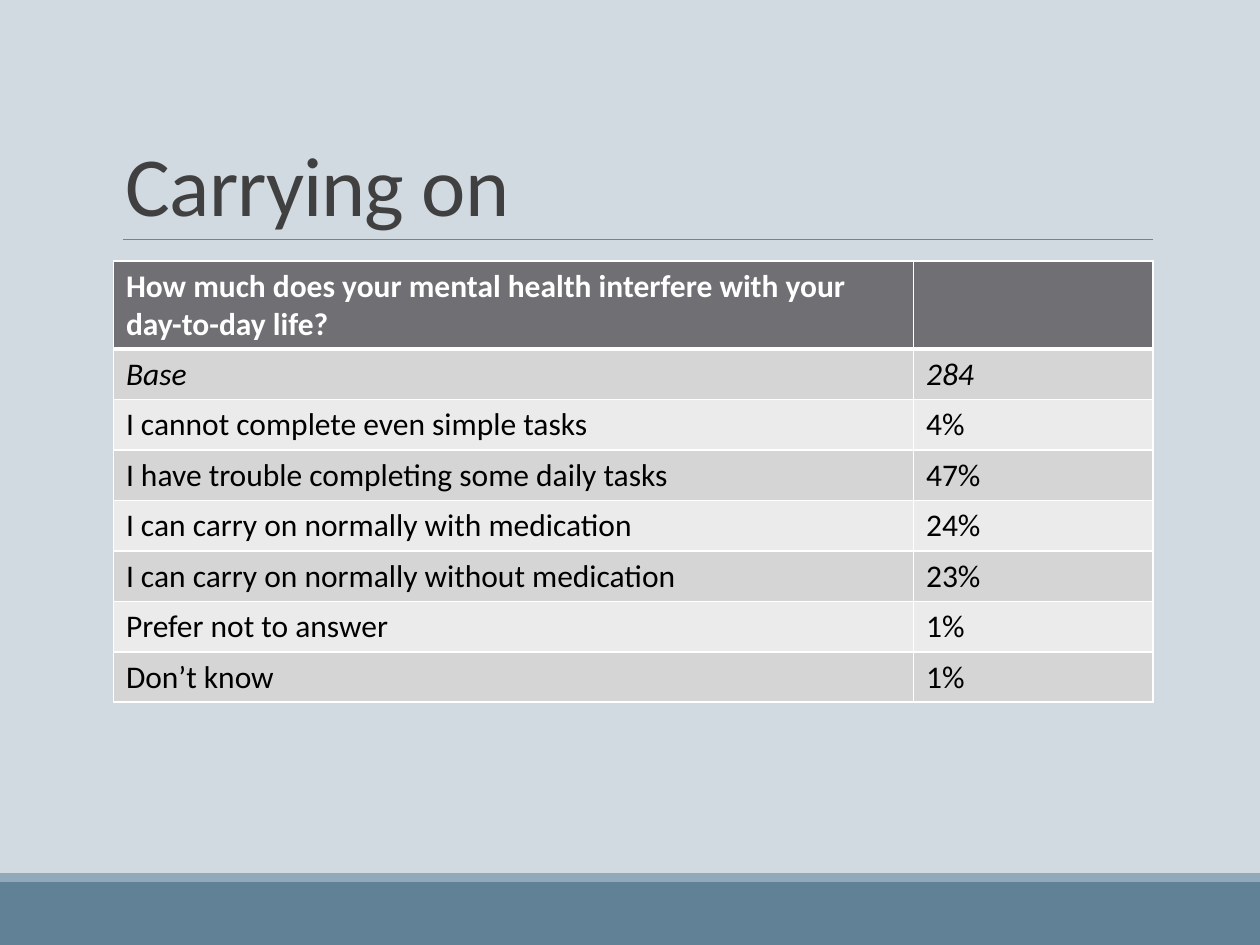
"""Build a slide with a survey table on how mental health affects daily life."""
from lxml.etree import SubElement
from pptx import Presentation
from pptx.dml.color import RGBColor
from pptx.enum.shapes import MSO_CONNECTOR, MSO_SHAPE
from pptx.enum.text import MSO_ANCHOR
from pptx.oxml.ns import qn
from pptx.util import Inches, Pt

FONT = "Calibri"
PALE = RGBColor(0xD1, 0xD9, 0xE1)
BLUE = RGBColor(0x61, 0x81, 0x97)
LIGHT = RGBColor(0x92, 0xA9, 0xB9)
GREY = RGBColor(0x80, 0x80, 0x80)
DARK = RGBColor(0x40, 0x40, 0x40)
HEAD = RGBColor(0x6F, 0x6F, 0x74)
ODD = RGBColor(0xD5, 0xD5, 0xD6)
EVEN = RGBColor(0xEB, 0xEB, 0xEB)
WHITE = RGBColor(0xFF, 0xFF, 0xFF)
BLACK = RGBColor(0, 0, 0)

ROWS = [
    ("How much does your mental health interfere with your day-to-day life?", ""),
    ("Base", "284"),
    ("I cannot complete even simple tasks", "4%"),
    ("I have trouble completing some daily tasks", "47%"),
    ("I can carry on normally with medication", "24%"),
    ("I can carry on normally without medication", "23%"),
    ("Prefer not to answer", "1%"),
    ("Don’t know", "1%"),
]
WIDTHS = (6.35, 1.9)
HEIGHTS = [0.69] + [0.4] * (len(ROWS) - 1)


def add_band(slide, top, height, color):
    band = slide.shapes.add_shape(
        MSO_SHAPE.RECTANGLE, 0, Inches(top), Inches(10), Inches(height))
    band.shadow.inherit = False
    band.fill.solid()
    band.fill.fore_color.rgb = color
    band.line.fill.background()


def add_rule(slide, left, right, top):
    rule = slide.shapes.add_connector(
        MSO_CONNECTOR.STRAIGHT, Inches(left), Inches(top), Inches(right), Inches(top))
    rule.line.color.rgb = GREY
    rule.line.width = Pt(0.5)
    SubElement(rule._element.spPr, qn("a:effectLst"))


def add_run(para, text, size, color, bold=False, italic=False):
    run = para.add_run()
    run.text = text
    font = run.font
    font.name, font.size, font.bold, font.italic = FONT, Pt(size), bold, italic
    font.color.rgb = color
    return run


def add_title(slide, text):
    box = slide.shapes.add_textbox(Inches(0.9), Inches(0.31), Inches(8.25), Inches(1.59))
    frame = box.text_frame
    frame.word_wrap = True
    frame.vertical_anchor = MSO_ANCHOR.BOTTOM
    para = frame.paragraphs[0]
    para.line_spacing = 0.85
    run = add_run(para, text, 48, DARK)
    run.font._element.set("spc", "-50")


def set_edges(cell, top, bottom):
    props = cell._tc.get_or_add_tcPr()
    edges = (("a:lnL", 1), ("a:lnR", 1), ("a:lnT", top), ("a:lnB", bottom))
    for spot, (tag, width) in enumerate(edges):
        line = props.makeelement(qn(tag), {"w": str(Pt(width))})
        props.insert(spot, line)
        fill = SubElement(line, qn("a:solidFill"))
        SubElement(fill, qn("a:srgbClr"), val=str(WHITE))


def fill_cell(cell, text, row):
    head = row == 0
    cell.fill.solid()
    cell.fill.fore_color.rgb = HEAD if head else ODD if row % 2 else EVEN
    set_edges(cell, 3 if row == 1 else 1, 3 if head else 1)
    para = cell.text_frame.paragraphs[0]
    para.font.size = Pt(18)
    if text:
        add_run(para, text, 18, WHITE if head else BLACK, head, row == 1)


def add_grid(slide):
    frame = slide.shapes.add_table(
        len(ROWS), len(WIDTHS), Inches(0.9), Inches(2.07),
        Inches(sum(WIDTHS)), Inches(sum(HEIGHTS)))
    table = frame.table
    for col, width in zip(table.columns, WIDTHS):
        col.width = Inches(width)
    for row, (height, texts) in enumerate(zip(HEIGHTS, ROWS)):
        table.rows[row].height = Inches(height)
        for col, text in enumerate(texts):
            fill_cell(table.cell(row, col), text, row)


def main():
    deck = Presentation()
    deck.slide_width, deck.slide_height = Inches(10), Inches(7.5)
    slide = deck.slides.add_slide(deck.slide_layouts[6])
    slide.background.fill.solid()
    slide.background.fill.fore_color.rgb = PALE
    add_band(slide, 7, 0.5, BLUE)
    add_band(slide, 6.93, 0.07, LIGHT)
    add_rule(slide, 0.98, 9.15, 1.9)
    add_title(slide, "Carrying on")
    add_grid(slide)
    deck.save("out.pptx")


if __name__ == "__main__":
    main()
